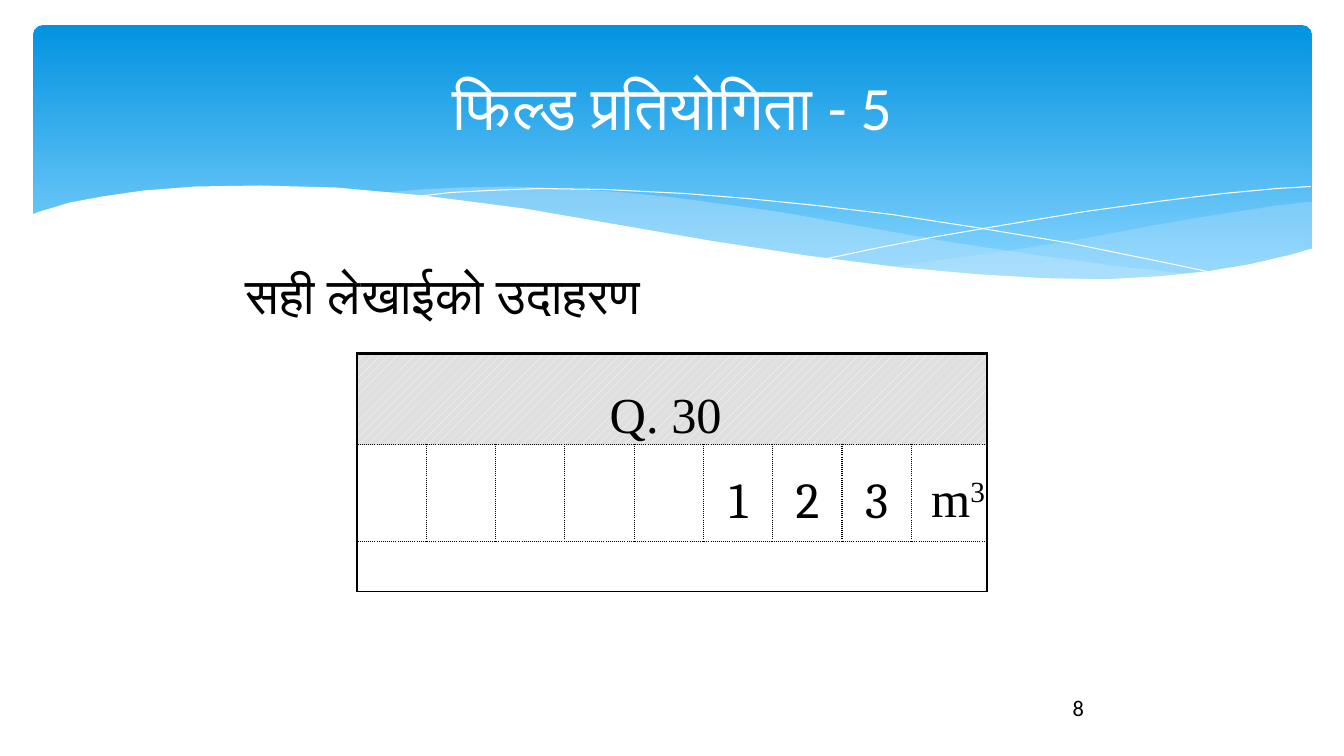
from lxml import etree
from pptx import Presentation
from pptx.dml.color import RGBColor
from pptx.enum.dml import MSO_PATTERN
from pptx.enum.shapes import MSO_SHAPE
from pptx.enum.text import MSO_ANCHOR, PP_ALIGN
from pptx.oxml.ns import qn
from pptx.util import Inches, Pt

ROUNDED = MSO_SHAPE.ROUNDED_RECTANGLE
DOTTED_FILL = MSO_PATTERN.PERCENT_20
LEFT, CENTER, RIGHT = PP_ALIGN.LEFT, PP_ALIGN.CENTER, PP_ALIGN.RIGHT
TOP, MIDDLE, BOTTOM = MSO_ANCHOR.TOP, MSO_ANCHOR.MIDDLE, MSO_ANCHOR.BOTTOM

# Header curves, in inches from the top left corner of the header box
RIGHT_WAVE = [
    (12.68, 1.75), (12.32, 1.79), (11.94, 1.85), (11.55, 1.91), (11.14, 1.98),
    (10.4, 2.12), (9.72, 2.23), (9.08, 2.32), (8.49, 2.4), (9.07, 2.46),
    (9.6, 2.5), (10.08, 2.52), (10.52, 2.53), (10.93, 2.52), (11.3, 2.49),
    (11.74, 2.44), (12.14, 2.37), (12.68, 2.22)]
MIDDLE_WAVE = [
    (11.57, 2.48), (10.83, 2.4), (10.01, 2.29), (9.08, 2.15), (8.06, 1.97),
    (7.45, 1.86), (6.88, 1.78), (6.36, 1.71), (5.86, 1.66), (5.27, 1.62),
    (4.73, 1.6), (4.26, 1.61), (3.85, 1.63), (3.49, 1.66), (4.23, 1.74),
    (5.06, 1.86), (6.21, 2.07), (7.22, 2.23), (8.13, 2.36), (8.93, 2.45),
    (9.65, 2.51), (10.28, 2.53), (10.85, 2.53), (11.34, 2.5)]
FALLING_LINE = [
    (3.79, 1.7), (4.14, 1.66), (4.51, 1.64), (5.02, 1.62), (5.67, 1.63),
    (6.47, 1.67), (7.09, 1.72), (7.78, 1.79), (8.53, 1.88), (9.37, 2.01),
    (10.27, 2.16), (11.25, 2.36), (11.77, 2.47)]
RISING_LINE = [
    (7.85, 2.32), (8.37, 2.21), (8.94, 2.1), (9.64, 1.98), (10.42, 1.85),
    (11.22, 1.74), (11.8, 1.67), (12.34, 1.62), (12.67, 1.6)]
WHITE_WAVE = [
    (-0.02, 1.88), (0.06, 1.85), (0.36, 1.76), (0.68, 1.7), (1.09, 1.64),
    (1.61, 1.6), (2.25, 1.59), (3, 1.61), (3.88, 1.69), (4.88, 1.82),
    (5.63, 1.95), (6.73, 2.14), (7.71, 2.29), (8.58, 2.4), (9.36, 2.47),
    (10.04, 2.51), (10.64, 2.52), (11.18, 2.49), (11.65, 2.44),
    (12.07, 2.37), (12.46, 2.28), (12.7, 2.21), (12.7, 3.04), (-0.02, 3.04)]


def rgb(color):
    return RGBColor.from_string(color)


def add_run(p, text, size=36, font="Calibri", color="000000", baseline=None):
    r = p.add_run()
    r.text = text
    r.font.size, r.font.name = Pt(size), font
    r.font.color.rgb = rgb(color)
    if baseline:
        r.font._element.set("baseline", str(baseline * 1000))


def add_text(s, text, x, y, w, h, align=LEFT, anchor=TOP, **style):
    tf = s.shapes.add_textbox(Inches(x), Inches(y), Inches(w), Inches(h)).text_frame
    tf.word_wrap = True
    tf.vertical_anchor = anchor
    tf.paragraphs[0].alignment = align
    add_run(tf.paragraphs[0], text, **style)


def add_curve(s, x, y, points, fill=None, alpha=100):
    """Draw a filled area, or a white hairline if there is no fill."""
    pts = [(Inches(x + px), Inches(y + py)) for px, py in points]
    builder = s.shapes.build_freeform(*pts[0])
    builder.add_line_segments(pts[1:], close=fill is not None)
    sp = builder.convert_to_shape()
    sp.shadow.inherit = False
    if fill is None:
        sp.fill.background()
        sp.line.color.rgb = rgb("FFFFFF")
        sp.line.width = Pt(0)
        return
    sp.line.fill.background()
    sp.fill.solid()
    sp.fill.fore_color.rgb = rgb(fill)
    if alpha < 100:
        clr = sp._element.spPr.find(qn("a:solidFill"))[0]
        etree.SubElement(clr, qn("a:alpha")).set("val", str(alpha * 1000))


def add_header(s, x, y, w, h):
    sp = s.shapes.add_shape(ROUNDED, Inches(x), Inches(y), Inches(w), Inches(h))
    sp.adjustments[0] = 0.034
    sp.shadow.inherit = False
    sp.line.fill.background()
    sp.fill.gradient()
    sp.fill.gradient_angle = 270
    for stop, pos, color in zip(sp.fill.gradient_stops, (0, 0.9), ("0293E0", "83D3FE")):
        stop.position = pos
        stop.color.rgb = rgb(color)
    add_curve(s, x, y, RIGHT_WAVE, "C6E7FC", 29)
    add_curve(s, x, y, MIDDLE_WAVE, "C6E7FC", 40)
    add_curve(s, x, y, FALLING_LINE)
    add_curve(s, x, y, RISING_LINE)
    add_curve(s, x, y, WHITE_WAVE, "FFFFFF")
    add_text(s, "फिल्ड प्रतियोगिता - 5", x + 0.34, y + 0.12, w - 0.68, 1.37,
             align=CENTER, anchor=MIDDLE, size=44, color="FFFFFF")


def set_borders(cell, **sides):
    """Set each side, L, R, T or B, to a (width, dash) pair."""
    tcPr = cell._tc.get_or_add_tcPr()
    for i, side in enumerate("LRTB"):
        width, dash = sides[side]
        ln = etree.Element(qn(f"a:ln{side}"), w=str(Pt(width)))
        fill = etree.SubElement(ln, qn("a:solidFill"))
        etree.SubElement(fill, qn("a:srgbClr"), val="000000")
        etree.SubElement(ln, qn("a:prstDash"), val=dash)
        tcPr.insert(i, ln)


def fill_cell(cell, runs, align=CENTER, spacing=1.5, before=1.2):
    p = cell.text_frame.paragraphs[0]
    p.alignment, p.line_spacing, p.space_before = align, spacing, Pt(before)
    for text, style in runs:
        add_run(p, text, **style)


def add_answer_table(s, x, y, w, h):
    rows, cols, unit_w = 3, 9, 0.75
    table = s.shapes.add_table(rows, cols, Inches(x), Inches(y), Inches(w), Inches(h)).table
    table.first_row = table.horz_banding = False
    for col in table.columns:
        col.width = Inches((w - unit_w) / (cols - 1))
    table.columns[cols - 1].width = Inches(unit_w)
    for row, height in zip(table.rows, (0.9, 0.96, h - 1.86)):
        row.height = Inches(height)
    for i in (0, 2):
        table.cell(i, 0).merge(table.cell(i, cols - 1))

    thick, thin, dotted = (2.25, "solid"), (1, "solid"), (1, "dot")
    for i in range(rows):
        for j in range(cols):
            cell = table.cell(i, j)
            cell.fill.background()
            cell.margin_left = cell.margin_right = Inches(0.02)
            cell.margin_top = cell.margin_bottom = 0
            at_right = j == cols - 1 or cell.is_merge_origin
            set_borders(cell, L=dotted if j else thick, R=thin if at_right else dotted,
                        T=dotted if i else thick, B=thin if i == rows - 1 else dotted)

    head = table.cell(0, 0)
    head.fill.patterned()
    head.fill.pattern = DOTTED_FILL
    head.fill.fore_color.rgb = rgb("FFFFFF")
    head.fill.back_color.rgb = rgb("DFDFDF")
    head.vertical_anchor = BOTTOM
    serif = {"font": "Times New Roman"}
    fill_cell(head, [("Q. 30 ", serif)], spacing=1.0, before=0.3)
    for j, digit in enumerate("123", start=5):
        fill_cell(table.cell(1, j), [(digit, {"font": "Cambria"})])
    fill_cell(table.cell(1, cols - 1), [("m", serif), ("3", {**serif, "baseline": 30})],
              align=RIGHT)


def main():
    prs = Presentation()
    prs.slide_width, prs.slide_height = Inches(13.33), Inches(7.5)
    s = prs.slides.add_slide(prs.slide_layouts[6])
    add_header(s, 0.33, 0.25, 12.68, 2.7)
    add_answer_table(s, 3.54, 3.51, 6.25, 2.36)
    add_text(s, "सही लेखाईको उदाहरण", 2.34, 2.57, 8.98, 0.71, font="Noto Sans CJK JP")
    add_text(s, "8", 10.06, 6.82, 1.27, 0.4, align=CENTER, anchor=MIDDLE, size=16)
    prs.save("out.pptx")


if __name__ == "__main__":
    main()
